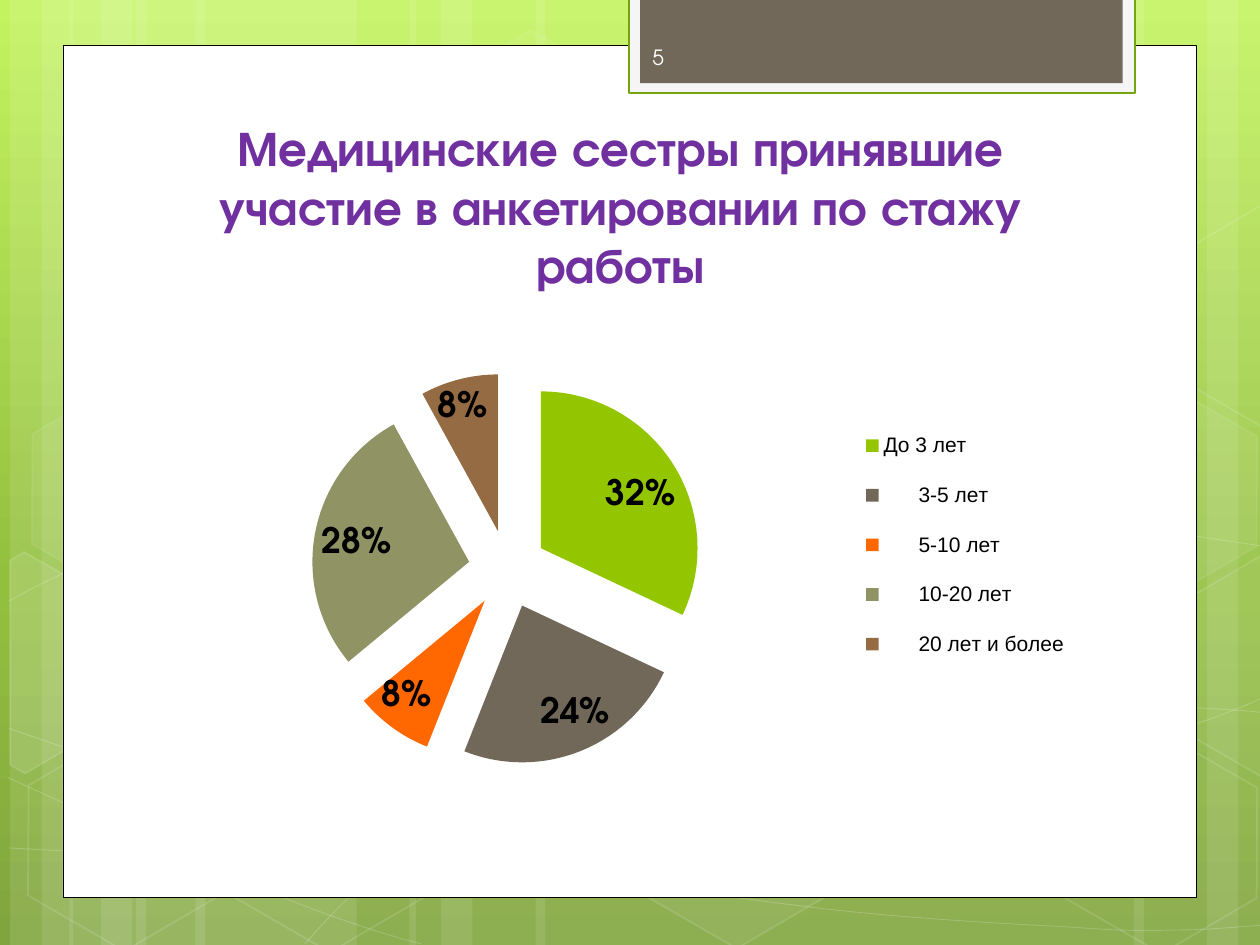
"""Build a slide with a pie chart of nurses by length of service."""
from copy import deepcopy
from dataclasses import dataclass
from typing import Optional

from lxml.etree import SubElement
from pptx import Presentation
from pptx.chart.data import CategoryChartData as ChartData
from pptx.dml.color import RGBColor as RGB
from pptx.enum.chart import XL_CHART_TYPE as Kind, XL_LABEL_POSITION as Spot, XL_LEGEND_POSITION as Side
from pptx.enum.shapes import MSO_SHAPE as Form
from pptx.enum.text import MSO_ANCHOR as Anchor, PP_ALIGN as Align
from pptx.oxml.ns import qn
from pptx.util import Inches, Pt

WHITE = RGB(0xFF, 0xFF, 0xFF)
BLACK = RGB(0, 0, 0)
PALE = RGB(0xF5, 0xF5, 0xF5)
GREEN = RGB(0x74, 0xA5, 0x10)
TAUPE = RGB(0x71, 0x68, 0x5A)
PURPLE = RGB(0x70, 0x30, 0xA0)
CREAM = RGB(0xFE, 0xFE, 0xFE)
SKY = ((0, RGB(0xC3, 0xF3, 0x5F)), (0.62, RGB(0x93, 0xBF, 0x3F)), (1, RGB(0x81, 0xA5, 0x3E)))
FONT = "TeX Gyre Adventor"
GAP = " " * 5


@dataclass
class Look:
    fill: Optional[RGB] = None
    alpha: int = 100
    line: Optional[RGB] = None
    width: float = 1
    clear: int = 100


@dataclass
class Hex:
    left: float
    top: float
    fill: int
    line: int


@dataclass
class Slice:
    name: str
    share: float
    color: RGB


BANDS = ((1.08, 1.75), (0.08, 0.5), (0.33, 0.83), (1.55, 1.75), (0.55, 0.5), (0.8, 0.83),
         (7.33, 1.75), (9.58, 0.5), (9, 0.83), (4.25, 3.08), (3.25, 0.5), (3.5, 0.83))
WAVES = (
    ((0.07, 6.73), (0.61, 6.76), (1.15, 6.79), (1.9, 6.78), (2.65, 6.77), (3.58, 6.75), (4.58, 6.65),
     (5.58, 6.55), (7, 6.36), (7.92, 6.17), (8.83, 5.98), (9.77, 5.68), (10.07, 5.51)),
    ((0.07, 4.77), (0.36, 4.61), (0.65, 4.46), (1.21, 4.31), (1.78, 4.16), (2.59, 3.94), (3.47, 3.87),
     (4.36, 3.8), (5.44, 3.79), (6.54, 3.87), (7.64, 3.95), (9.47, 4.26), (10.07, 4.34)),
    ((0.06, 6.17), (1.27, 6.72), (2.47, 7.27), (3.34, 7.49)),
    ((0.07, 5.78), (0.38, 5.89), (0.7, 6), (1.28, 6.16), (1.86, 6.31), (2.73, 6.56), (3.57, 6.73),
     (4.4, 6.9), (5.45, 7.08), (6.28, 7.18), (7.11, 7.29), (8, 7.33), (8.53, 7.36),
     (9.05, 7.4), (9.19, 7.38), (9.45, 7.38), (9.71, 7.37), (9.89, 7.35), (10.07, 7.34)),
    ((2.42, 7.49), (2.6, 7.29), (2.78, 7.09), (3.02, 6.91), (3.26, 6.73), (3.6, 6.53), (3.88, 6.39),
     (4.16, 6.25), (4.33, 6.19), (4.7, 6.09), (5.06, 5.99), (5.73, 5.85), (6.08, 5.78),
     (6.44, 5.71), (6.49, 5.71), (6.8, 5.69), (7.11, 5.66), (7.6, 5.63), (7.94, 5.62),
     (8.29, 5.61), (8.86, 5.62), (8.86, 5.62), (9.08, 5.62), (9.3, 5.62), (9.53, 5.62),
     (9.71, 5.63), (9.88, 5.64), (9.97, 5.65), (10.06, 5.66), (10.03, 5.65), (10.06, 5.66)),
)
HEXES = (Hex(3.34, 0.36, 4, 8), Hex(4.97, 5.89, 6, 12), Hex(0.11, 5.91, 0, 12), Hex(0.14, 3.12, 7, 8),
         Hex(1.74, 5.92, 0, 12), Hex(8.34, 5.93, 0, 12), Hex(8.34, 3.14, 7, 8))
SHARDS = (
    (((0.08, 4.45), (0.19, 4.38), (0.96, 4.82), (0.95, 5.7), (0.2, 6.14), (0.08, 6.07)), 10),
    (((9.26, 4.85), (10.01, 4.41), (10.09, 4.46), (10.09, 6.13), (10.02, 6.17), (9.26, 5.73)), 4),
    (((9.26, 2.07), (10.01, 1.63), (10.1, 1.68), (10.09, 3.35), (10.02, 3.39), (9.26, 2.95)), 0),
)
SLICES = (
    Slice("До 3 лет ", 0.32, RGB(0x94, 0xC6, 0x00)),
    Slice(GAP + " 3-5 лет", 0.24, TAUPE),
    Slice(GAP + " 5-10 лет", 0.08, RGB(0xFF, 0x67, 0x00)),
    Slice(GAP + " 10-20 лет", 0.28, RGB(0x90, 0x94, 0x65)),
    Slice(GAP + " 20 лет и более", 0.08, RGB(0x95, 0x6B, 0x43)),
)


def tint(fill, color: RGB, alpha: int) -> None:
    fill.solid()
    fill.fore_color.rgb = color
    if alpha < 100:
        node = fill._xPr.find(qn("a:solidFill"))[0]
        SubElement(node, qn("a:alpha")).set("val", str(alpha * 1000))


def dress(shape, look: Look) -> None:
    shape.shadow.inherit = False
    if look.fill is None or look.alpha == 0:
        shape.fill.background()
    else:
        tint(shape.fill, look.fill, look.alpha)
    if look.line is None:
        shape.line.fill.background()
    else:
        shape.line.width = Pt(look.width)
        tint(shape.line.fill, look.line, look.clear)


def block(slide, form: Form, box: tuple, look: Look):
    shape = slide.shapes.add_shape(form, *map(Inches, box))
    dress(shape, look)
    return shape


def trace(slide, points: tuple, look: Look, close: bool):
    spots = [(Inches(x), Inches(y)) for x, y in points]
    pen = slide.shapes.build_freeform(*spots[0])
    pen.add_line_segments(spots[1:], close=close)
    shape = pen.convert_to_shape()
    dress(shape, look)
    return shape


def bend(shape) -> None:
    route = shape._element.find(".//" + qn("a:path"))
    legs = route.findall(qn("a:lnTo"))
    for i in range(0, len(legs), 3):
        arc = SubElement(route, qn("a:cubicBezTo"))
        for leg in legs[i:i + 3]:
            arc.append(leg[0])
            route.remove(leg)


def label(slide, box: tuple, text: str, size: int, color: RGB, anchor: Anchor, align: Align, bold: bool) -> None:
    frame = slide.shapes.add_textbox(*map(Inches, box)).text_frame
    frame.word_wrap = True
    frame.vertical_anchor = anchor
    para = frame.paragraphs[0]
    para.text = text
    para.alignment = align
    para.font.name, para.font.size, para.font.bold = FONT, Pt(size), bold
    para.font.color.rgb = color


def backdrop(slide) -> None:
    fill = slide.background.fill
    fill.gradient()
    fill.gradient_angle = 270
    stops = slide.element.find(".//" + qn("a:gsLst"))
    stops.insert(1, deepcopy(stops[0]))
    for stop, (place, color) in zip(fill.gradient_stops, SKY):
        stop.position = place
        stop.color.rgb = color
    for left, width in BANDS:
        block(slide, Form.RECTANGLE, (left, 0, width, 7.5), Look(WHITE, 10))
    for knots in WAVES:
        bend(trace(slide, knots, Look(line=WHITE, width=0.5, clear=20), False))
    for cell in HEXES:
        shape = block(slide, Form.HEXAGON, (cell.left, cell.top, 1.75, 1.52),
                      Look(WHITE, cell.fill, WHITE, 1, cell.line))
        shape.adjustments[0] = 0.285
        shape.rotation = 30
    for points, alpha in SHARDS:
        trace(slide, points, Look(WHITE, alpha, WHITE, 1, 12), True)


def place(node, after: str, inner: bool, box: tuple) -> None:
    for old in node.findall(qn("c:layout")):
        node.remove(old)
    layout = SubElement(node, qn("c:layout"))
    manual = SubElement(layout, qn("c:manualLayout"))
    rules = [("layoutTarget", "inner")] if inner else []
    rules += [("xMode", "edge"), ("yMode", "edge"), *zip("xywh", map(str, box))]
    for name, value in rules:
        SubElement(manual, qn("c:" + name)).set("val", value)
    if after:
        node.find(qn(after)).addnext(layout)
    else:
        node.insert(0, layout)


def pie(slide) -> None:
    data = ChartData(number_format="0%")
    data.categories = [part.name for part in SLICES]
    data.add_series("Series 1", [part.share for part in SLICES])
    box = map(Inches, (1.14, 2.54, 7.41, 3.84))
    chart = slide.shapes.add_chart(Kind.PIE, *box, data).chart
    chart.has_title = False
    chart.font.name, chart.font.size = FONT, Pt(10)
    chart.font.color.rgb = BLACK
    chart.has_legend = True
    chart.legend.position = Side.RIGHT
    chart.legend.include_in_layout = False
    chart.legend.font.name, chart.legend.font.size = "Arial", Pt(12)
    plot = chart.plots[0]
    plot.vary_by_categories = True
    series = plot.series[0]
    for i, part in enumerate(SLICES):
        tint(series.points[i].format.fill, part.color, 100)
    burst = SubElement(series._element, qn("c:explosion"))
    burst.set("val", "25")
    series._element.find(qn("c:dPt")).addprevious(burst)
    tags = series.data_labels
    tags.show_value = True
    tags.number_format, tags.number_format_is_linked = "0%", False
    tags.position = Spot.BEST_FIT
    tags.font.name, tags.font.size, tags.font.bold = FONT, Pt(20), True
    tags.font.color.rgb = BLACK
    place(plot._element.getparent(), "", True, (0.18, 0.11, 0.42, 0.81))
    place(chart.legend._element, "c:legendPos", False, (0.77, 0.18, 0.22, 0.57))


def main() -> None:
    deck = Presentation()
    deck.slide_width, deck.slide_height = Inches(10), Inches(7.5)
    slide = deck.slides.add_slide(deck.slide_layouts[6])
    backdrop(slide)
    for box, look in (((0.5, 0.36, 9, 6.76), Look(WHITE, line=BLACK, width=0.5)),
                      ((4.99, -0.02, 4.02, 0.76), Look(PALE, line=GREEN, width=1.25)),
                      ((5.08, -0.02, 3.83, 0.68), Look(TAUPE))):
        block(slide, Form.RECTANGLE, box, look)
    label(slide, (1.02, 0.47, 7.81, 1.91), "Медицинские сестры принявшие участие в анкетировании по стажу работы",
          28, PURPLE, Anchor.BOTTOM, Align.CENTER, True)
    label(slide, (5.08, 0.25, 1.46, 0.4), "5", 12, CREAM, Anchor.MIDDLE, Align.LEFT, False)
    pie(slide)
    deck.save("out.pptx")


if __name__ == "__main__":
    main()
